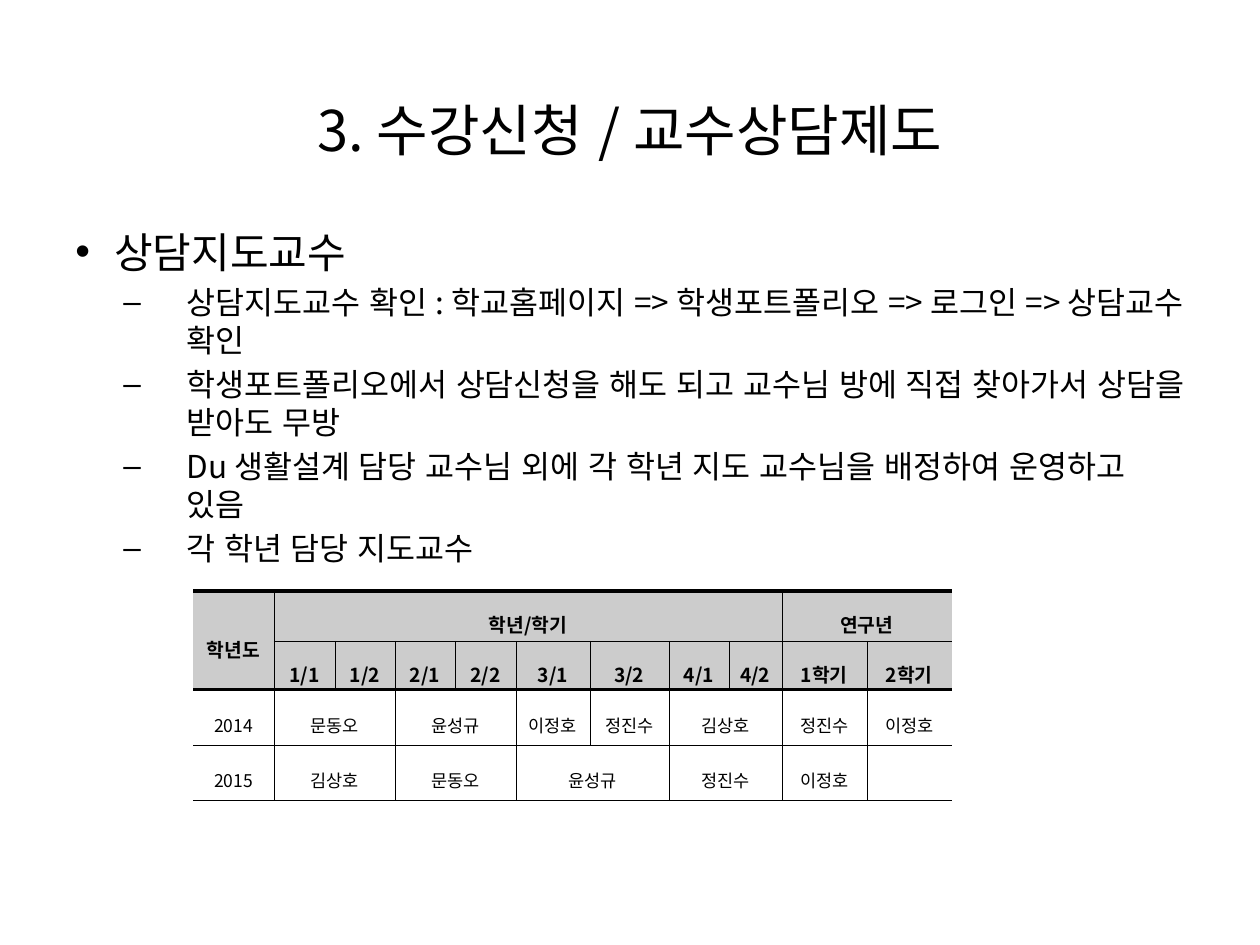
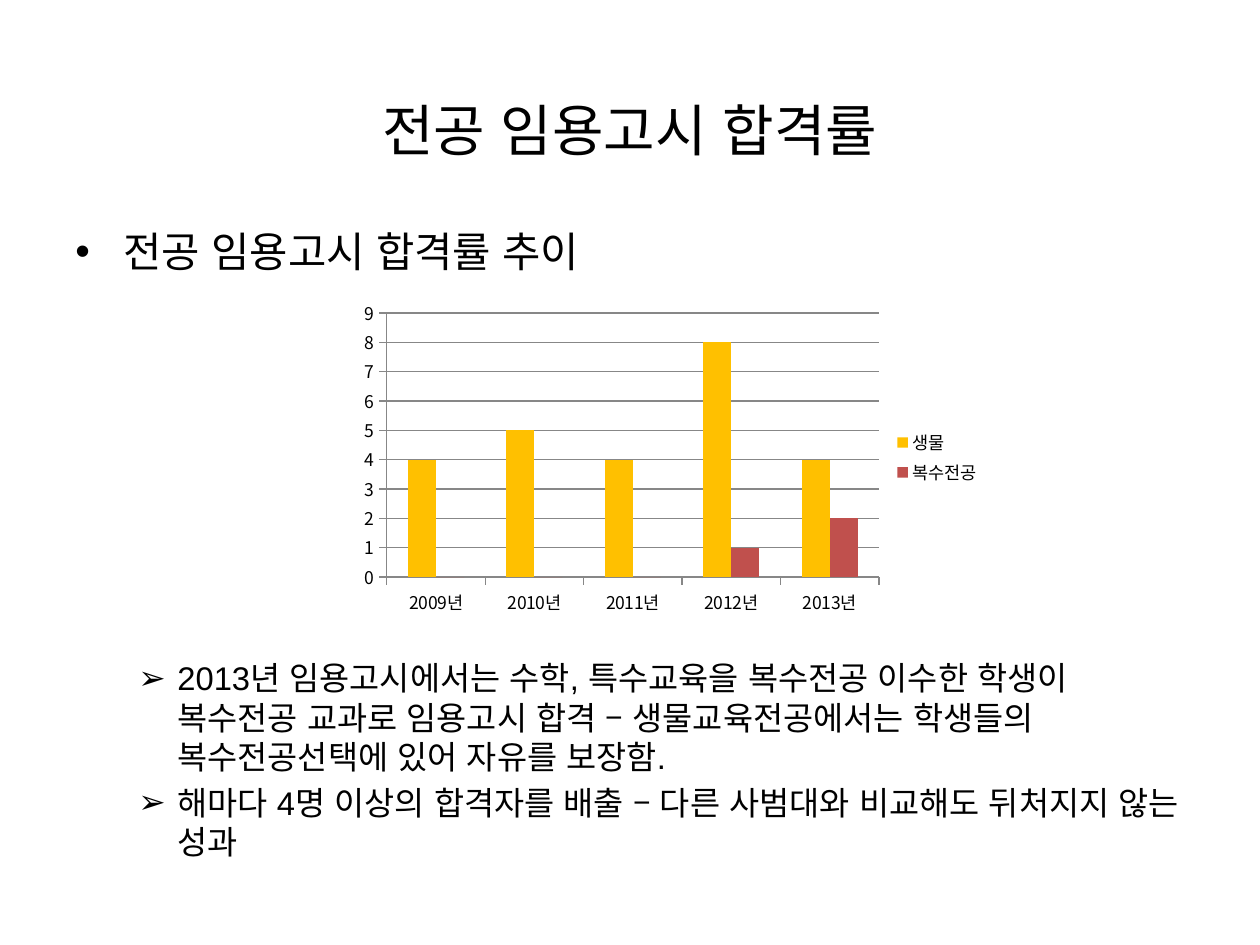
from lxml.etree import SubElement
from pptx import Presentation
from pptx.chart.data import CategoryChartData
from pptx.dml.color import RGBColor
from pptx.enum.chart import XL_CHART_TYPE, XL_LEGEND_POSITION, XL_TICK_MARK
from pptx.enum.lang import MSO_LANGUAGE_ID
from pptx.enum.text import MSO_ANCHOR, PP_ALIGN
from pptx.oxml.ns import qn
from pptx.util import Emu, Pt

BLACK = RGBColor(0x00, 0x00, 0x00)
HEADER_GRAY = RGBColor(0xCC, 0xCC, 0xCC)
GRID_GRAY = RGBColor(0x87, 0x87, 0x87)
GOLD = RGBColor(0xFF, 0xC0, 0x00)
RED = RGBColor(0xC0, 0x50, 0x4D)
KOREAN_FONT = "Noto Sans CJK KR"
LATIN_FONT = "Arial"
PX = 914400 / 126


def style_paragraph(paragraph, size, latin=KOREAN_FONT, bold=False):
    for run in paragraph.runs:
        run.font.size = Pt(size)
        run.font.bold = bold
        run.font.name = latin
        run.font.color.rgb = BLACK
        run.font.language_id = MSO_LANGUAGE_ID.KOREAN
        SubElement(run._r.get_or_add_rPr(), qn("a:ea"), typeface=KOREAN_FONT)


def add_text(slide, box, items, anchor=MSO_ANCHOR.TOP):
    """Each item is (text, size, latin font, bullet, margin px, hanging px)."""
    shape = slide.shapes.add_textbox(*[Emu(round(length * PX)) for length in box])
    text_frame = shape.text_frame
    text_frame.word_wrap = True
    text_frame.vertical_anchor = anchor
    text_frame.text = "\n".join(item[0] for item in items)
    for index, (paragraph, item) in enumerate(zip(text_frame.paragraphs, items)):
        text, size, latin, bullet, margin, hanging = item
        if bullet:
            if index:
                paragraph.space_before = Pt(round(size * 0.2, 1))
            properties = paragraph._p.get_or_add_pPr()
            properties.set("marL", str(round(margin * PX)))
            properties.set("indent", str(round(-hanging * PX)))
            SubElement(properties, qn("a:buFont"), typeface=LATIN_FONT)
            SubElement(properties, qn("a:buChar"), char=bullet)
        else:
            paragraph.alignment = PP_ALIGN.CENTER
        style_paragraph(paragraph, size, latin)


presentation = Presentation()
presentation.slide_width = Emu(round(1260 * PX))
presentation.slide_height = Emu(round(945 * PX))

# Shared titles
slides = []
for title, latin in [("3. 수강신청 / 교수상담제도", KOREAN_FONT), ("전공 임용고시 합격률", LATIN_FONT)]:
    slide = presentation.slides.add_slide(presentation.slide_layouts[6])
    add_text(slide, (63, 76, 1134, 107), [(title, 32, latin, None, 0, 0)], MSO_ANCHOR.MIDDLE)
    slides.append(slide)
advisor_slide, exam_slide = slides

# Advisor notes
advisor_notes = [
    "상담지도교수 확인 : 학교홈페이지 => 학생포트폴리오 => 로그인 => 상담교수 확인",
    "학생포트폴리오에서 상담신청을 해도 되고 교수님 방에 직접 찾아가서 상담을 받아도 무방",
    "Du 생활설계 담당 교수님 외에 각 학년 지도 교수님을 배정하여 운영하고 있음",
    "각 학년 담당 지도교수",
]
add_text(advisor_slide, (63, 220, 1134, 624),
         [("상담지도교수", 24, KOREAN_FONT, "•", 39, 39)]
         + [(note, 18, KOREAN_FONT, "–", 111, 63) for note in advisor_notes])

# Advisor table: None marks a cell covered by a merge
rows = [
    ["학년도", "학년/학기"] + [None] * 7 + ["연구년", None],
    [None, "1/1", "1/2", "2/1", "2/2", "3/1", "3/2", "4/1", "4/2", "1학기", "2학기"],
    ["2014", "문동오", None, "윤성규", None, "이정호", "정진수", "김상호", None, "정진수", "이정호"],
    ["2015", "김상호", None, "문동오", None, "윤성규", None, "정진수", None, "이정호", ""],
]
column_widths = [81, 61, 60, 60, 61, 74, 79, 60, 53, 85, 85]
row_heights = [50, 49, 55, 55]
THIN, HEADER_RULE = 0.28, 1.98
row_rules = [HEADER_RULE, THIN, HEADER_RULE, THIN, THIN]

table_frame = advisor_slide.shapes.add_table(
    len(rows), len(column_widths), Emu(round(193 * PX)), Emu(round(591 * PX)),
    Emu(round(sum(column_widths) * PX)), Emu(round(sum(row_heights) * PX)))
table = table_frame.table
table.first_row = table.horz_banding = False
table._tbl.tblPr.find(qn("a:tableStyleId")).text = "{2D5ABB26-0587-4C30-8999-92F81FD0307C}"
for column, width in zip(table.columns, column_widths):
    column.width = Emu(round(width * PX))
for row, height in zip(table.rows, row_heights):
    row.height = Emu(round(height * PX))

for r, texts in enumerate(rows):
    for c, text in enumerate(texts):
        if text is None:
            continue
        # Merge to the right over covered cells, and down for the year heading
        last_column = c
        while last_column + 1 < len(texts) and texts[last_column + 1] is None:
            last_column += 1
        last_row = 1 if (r, c) == (0, 0) else r
        cell = table.cell(r, c)
        if (last_row, last_column) != (r, c):
            cell.merge(table.cell(last_row, last_column))

        cell.text = text
        cell.vertical_anchor = MSO_ANCHOR.MIDDLE
        cell.margin_left = cell.margin_right = Emu(round(9 * PX))
        cell.margin_top = cell.margin_bottom = Emu(round(2 * PX))
        paragraph = cell.text_frame.paragraphs[0]
        paragraph.alignment = PP_ALIGN.CENTER
        paragraph.line_spacing = 1.6
        header = r < 2
        style_paragraph(paragraph, 11 if header else 10, bold=header)

        # Outer left and right sides stay open
        borders = {
            "L": THIN if c else 0,
            "R": THIN if last_column + 1 < len(texts) else 0,
            "T": row_rules[r],
            "B": row_rules[last_row + 1],
        }
        cell_properties = cell._tc.get_or_add_tcPr()
        for side, width in borders.items():
            line = SubElement(cell_properties, qn(f"a:ln{side}"), w=str(Pt(width)))
            if width:
                fill = SubElement(line, qn("a:solidFill"))
                SubElement(fill, qn("a:srgbClr"), val=str(BLACK))
            else:
                SubElement(line, qn("a:noFill"))
        if header:
            cell.fill.solid()
            cell.fill.fore_color.rgb = HEADER_GRAY
        else:
            cell.fill.background()

# Exam heading and remarks
exam_remarks = [
    "2013년 임용고시에서는 수학, 특수교육을 복수전공 이수한 학생이 복수전공 교과로 임용고시 합격 – "
    "생물교육전공에서는 학생들의 복수전공선택에 있어 자유를 보장함.",
    "해마다 4명 이상의 합격자를 배출 – 다른 사범대와 비교해도 뒤처지지 않는 성과",
]
add_text(exam_slide, (63, 220, 1134, 70),
         [("전공 임용고시 합격률 추이", 23.8, KOREAN_FONT, "•", 48, 48)])
add_text(exam_slide, (63, 652, 1134, 220),
         [(remark, 18.7, LATIN_FONT, "➢", 102, 39) for remark in exam_remarks])

# Exam chart
chart_data = CategoryChartData()
chart_data.categories = [f"{year}년" for year in range(2009, 2014)]
chart_data.add_series("생물", (4, 5, 4, 8, 4))
chart_data.add_series("복수전공", (0, 0, 0, 1, 2))
chart = exam_slide.shapes.add_chart(
    XL_CHART_TYPE.COLUMN_CLUSTERED,
    *[Emu(round(length * PX)) for length in (352, 294, 640, 327)], chart_data).chart
chart.has_title = False
chart.font.size = Pt(10)
chart.font.name = KOREAN_FONT
chart.font.color.rgb = BLACK
chart.has_legend = True
chart.legend.position = XL_LEGEND_POSITION.RIGHT
chart.legend.include_in_layout = False
plot = chart.plots[0]
plot.gap_width = 150
plot.overlap = 0
plot.vary_by_categories = False
for series, color in zip(plot.series, (GOLD, RED)):
    series.format.fill.solid()
    series.format.fill.fore_color.rgb = color

value_axis = chart.value_axis
value_axis.minimum_scale, value_axis.maximum_scale, value_axis.major_unit = 0, 9, 1
value_axis.has_major_gridlines = True
for axis in (chart.category_axis, value_axis):
    axis.major_tick_mark = XL_TICK_MARK.OUTSIDE
for part in (chart.category_axis, value_axis, value_axis.major_gridlines):
    part.format.line.color.rgb = GRID_GRAY
    part.format.line.width = Pt(0.75)

presentation.save("out.pptx")
